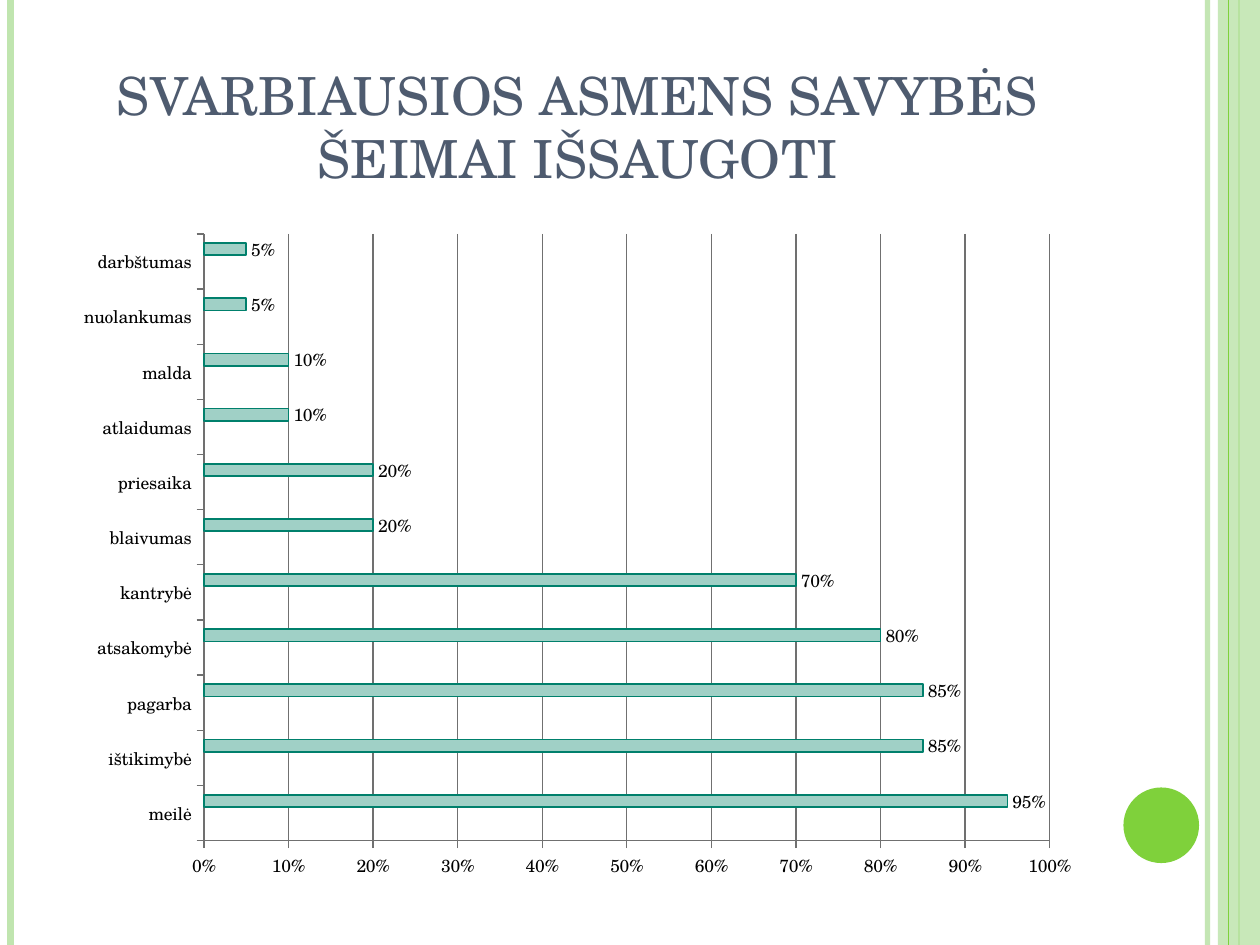
from lxml import etree
from pptx import Presentation
from pptx.chart.data import CategoryChartData
from pptx.dml.color import RGBColor
from pptx.enum.chart import XL_CHART_TYPE as CHART, XL_LABEL_POSITION as LABEL, XL_TICK_MARK as TICK
from pptx.enum.shapes import MSO_CONNECTOR, MSO_SHAPE as SHAPE
from pptx.enum.text import MSO_ANCHOR, PP_ALIGN
from pptx.oxml import parse_xml
from pptx.oxml.ns import nsdecls, qn
from pptx.util import Pt

WIDTH, HEIGHT = 720, 540
FONT = "TeX Gyre Schola"
GREEN = RGBColor(0x7F, 0xD1, 0x3B)
PALE_GREEN = RGBColor(0xC0, 0xE5, 0xAF)
SLATE = RGBColor(0x4E, 0x5B, 0x6F)
BLACK = RGBColor(0, 0, 0)
GREY = RGBColor(0x70, 0x70, 0x70)
PINK = RGBColor(0xEA, 0x15, 0x7A)
BAR_FILL = RGBColor(0xA0, 0xD0, 0xC6)
BAR_LINE = RGBColor(0x00, 0x80, 0x6C)

QUALITIES = [
    ("meilė", 0.95), ("ištikimybė", 0.85), ("pagarba", 0.85),
    ("atsakomybė", 0.8), ("kantrybė", 0.7), ("blaivumas", 0.2),
    ("priesaika", 0.2), ("atlaidumas", 0.1), ("malda", 0.1),
    ("nuolankumas", 0.05), ("darbštumas", 0.05),
]


def set_alpha(fill_parent, percent):
    color = next(fill_parent.iter(qn("a:srgbClr")))
    etree.SubElement(color, qn("a:alpha")).set("val", str(percent * 1000))


def add_stripe(slide, x, color, width, alpha=100):
    """Draw a vertical line over the full height of the slide."""
    s = slide.shapes.add_connector(MSO_CONNECTOR.STRAIGHT, Pt(x), 0, Pt(x), Pt(HEIGHT))
    s.line.color.rgb = color
    s.line.width = Pt(width)
    sp_pr = s._element.spPr
    if alpha < 100:
        set_alpha(sp_pr, alpha)
    etree.SubElement(sp_pr, qn("a:effectLst"))


def add_filled(slide, kind, x, y, w, h, color, alpha=100):
    s = slide.shapes.add_shape(kind, Pt(x), Pt(y), Pt(w), Pt(h))
    s.shadow.inherit = False
    s.fill.solid()
    s.fill.fore_color.rgb = color
    s.line.fill.background()
    if alpha < 100:
        set_alpha(s._element.spPr, alpha)


def add_title(slide, text):
    tf = slide.shapes.add_textbox(Pt(36), Pt(21.6), Pt(588), Pt(90)).text_frame
    tf.word_wrap = True
    tf.vertical_anchor = MSO_ANCHOR.BOTTOM
    p = tf.paragraphs[0]
    p.text = text
    p.alignment = PP_ALIGN.CENTER
    p.font.name, p.font.size, p.font.color.rgb = FONT, Pt(30), SLATE


def style_line(line, color, width):
    line.color.rgb = color
    line.width = Pt(width)


def set_plot_layout(chart, **fractions):
    """Fix the inner plot area, in fractions of the chart frame."""
    area = chart._chartSpace.chart.plotArea
    for old in area.findall(qn("c:layout")):
        area.remove(old)
    sizes = "".join(f'<c:{k} val="{v}"/>' for k, v in fractions.items())
    area.insert(0, parse_xml(
        f'<c:layout {nsdecls("c")}><c:manualLayout><c:layoutTarget val="inner"/>'
        f'<c:xMode val="edge"/><c:yMode val="edge"/>{sizes}</c:manualLayout></c:layout>'))


def add_qualities_chart(slide):
    names, shares = zip(*QUALITIES)
    data = CategoryChartData(number_format="0%")
    data.categories = names
    for name in ("Series 1", "Series 2"):
        data.add_series(name, [None] * len(names))
    data.add_series("Series 3", shares)
    chart = slide.shapes.add_chart(
        CHART.BAR_CLUSTERED, Pt(36), Pt(126), Pt(588), Pt(384), data).chart
    chart.has_legend = chart.has_title = False
    chart.font.name, chart.font.size, chart.font.color.rgb = FONT, Pt(10), BLACK
    set_plot_layout(chart, x=0.137, y=0.02, w=0.822, h=0.903)

    plot = chart.plots[0]
    plot.gap_width, plot.overlap, plot.vary_by_categories = 150, 0, False
    for series, color in zip(plot.series, (GREEN, PINK, BAR_FILL)):
        series.format.fill.solid()
        series.format.fill.fore_color.rgb = color
    shown = plot.series[2]
    style_line(shown.format.line, BAR_LINE, 1)
    labels = shown.data_labels
    labels.show_value = True
    labels.number_format, labels.number_format_is_linked = "0%", False
    labels.position = LABEL.OUTSIDE_END

    for axis in (chart.category_axis, chart.value_axis):
        axis.major_tick_mark, axis.minor_tick_mark = TICK.OUTSIDE, TICK.NONE
        style_line(axis.format.line, GREY, 0.75)
    axis = chart.value_axis
    axis.minimum_scale, axis.maximum_scale, axis.major_unit = 0, 1, 0.1
    axis.tick_labels.number_format = "0%"
    axis.tick_labels.number_format_is_linked = False
    axis.has_major_gridlines = True
    style_line(axis.major_gridlines.format.line, GREY, 0.75)


def main():
    prs = Presentation()
    prs.slide_width, prs.slide_height = Pt(WIDTH), Pt(HEIGHT)
    slide = prs.slides.add_slide(prs.slide_layouts[6])
    add_stripe(slide, 690, PALE_GREEN, 3, alpha=93)
    add_stripe(slide, 6, PALE_GREEN, 4.5)
    add_stripe(slide, 708, GREEN, 1.5)
    add_filled(slide, SHAPE.RECTANGLE, 696, 0, 24, HEIGHT, PALE_GREEN, alpha=87)
    add_stripe(slide, 702, GREEN, 0.75)
    add_filled(slide, SHAPE.OVAL, 642, 450, 43.2, 43.2, GREEN)
    add_title(slide, "SVARBIAUSIOS ASMENS SAVYBĖS ŠEIMAI IŠSAUGOTI")
    add_qualities_chart(slide)
    prs.save("out.pptx")


if __name__ == "__main__":
    main()
